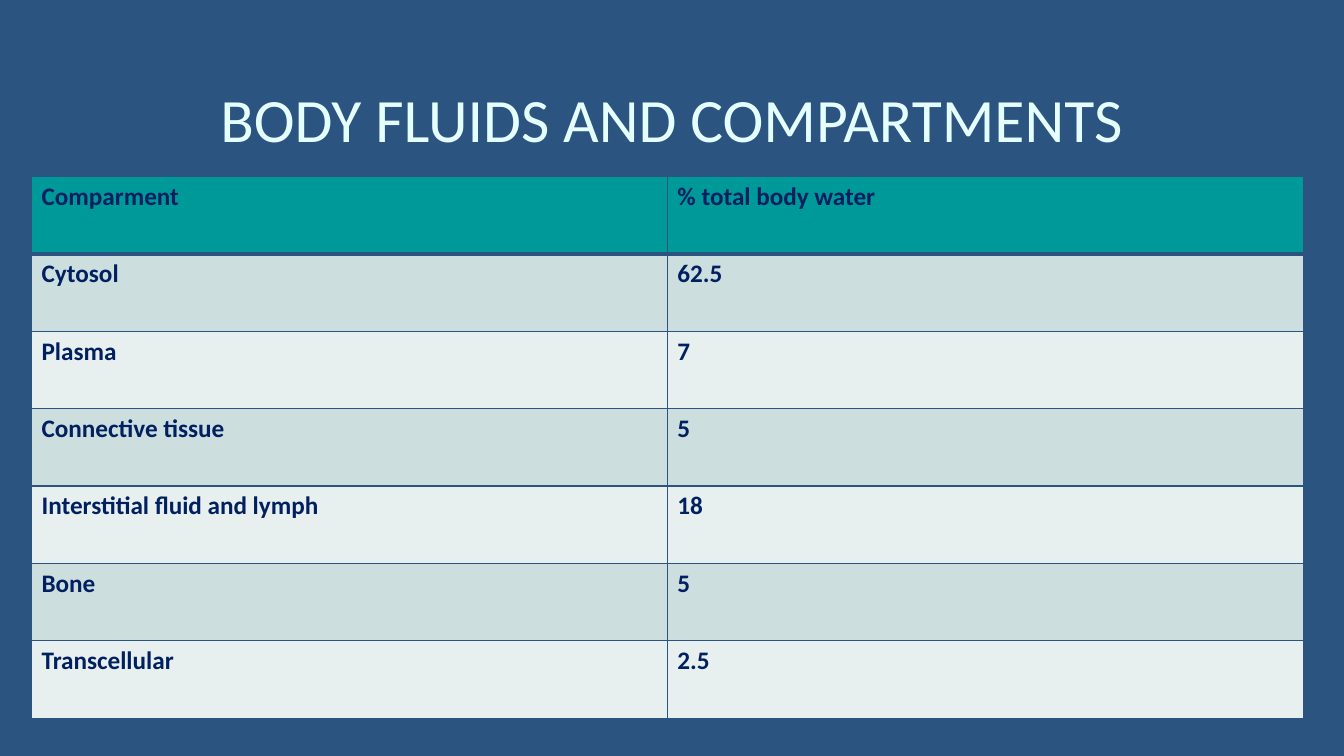
from lxml.etree import SubElement
from pptx import Presentation
from pptx.dml.color import RGBColor
from pptx.enum.text import MSO_ANCHOR, PP_ALIGN
from pptx.oxml.ns import qn
from pptx.util import Pt

COMPARTMENTS = [
    ("Comparment", "% total body water"),
    ("Cytosol", "62.5"),
    ("Plasma", "7"),
    ("Connective tissue", "5"),
    ("Interstitial fluid and lymph", "18"),
    ("Bone", "5"),
    ("Transcellular", "2.5"),
]


def color(hex_code):
    return RGBColor.from_string(hex_code)


class SlideBuilder:
    font_name = "Calibri"
    background = "2B5481"
    title_color = "E5FFFF"
    text_color = "002060"
    header_fill = "009999"
    band_fills = ("E7EFEF", "CCDEDE")

    def __init__(self, deck):
        self.page = deck.slides.add_slide(deck.slide_layouts[5])
        fill = self.page.background.fill
        fill.solid()
        fill.fore_color.rgb = color(self.background)

    def format_text(self, para, size, hex_code, bold=False):
        for span in para.runs:
            span.font.name = self.font_name
            span.font.size = Pt(size)
            span.font.bold = bold
            span.font.color.rgb = color(hex_code)

    def title(self, text, left, top, width, height):
        box = self.page.shapes.title
        box.left, box.top = Pt(left), Pt(top)
        box.width, box.height = Pt(width), Pt(height)
        frame = box.text_frame
        frame.text = text
        frame.word_wrap = True
        frame.vertical_anchor = MSO_ANCHOR.MIDDLE
        para = frame.paragraphs[0]
        para.alignment = PP_ALIGN.CENTER
        self.format_text(para, 44, self.title_color)

    def borders(self, cell, bottom_width):
        properties = cell._tc.get_or_add_tcPr()
        widths = {"a:lnL": 1, "a:lnR": 1, "a:lnT": 1, "a:lnB": bottom_width}
        for position, (side, width) in enumerate(widths.items()):
            line = SubElement(properties, qn(side), w=str(Pt(width)))
            solid = SubElement(line, qn("a:solidFill"))
            SubElement(solid, qn("a:srgbClr"), val=self.background)
            properties.insert(position, line)

    def table(self, rows, left, top, width, height):
        frame = self.page.shapes.add_table(
            len(rows), len(rows[0]), Pt(left), Pt(top), Pt(width), Pt(height))
        for row_number, values in enumerate(rows):
            is_header = row_number == 0
            fill = self.header_fill if is_header else self.band_fills[row_number % 2]
            for column_number, value in enumerate(values):
                cell = frame.table.cell(row_number, column_number)
                cell.text_frame.text = value
                self.format_text(cell.text_frame.paragraphs[0], 18, self.text_color, bold=True)
                cell.fill.solid()
                cell.fill.fore_color.rgb = color(fill)
                self.borders(cell, bottom_width=3 if is_header else 1)


def main():
    deck = Presentation()
    deck.slide_width, deck.slide_height = Pt(960), Pt(540)
    builder = SlideBuilder(deck)

    # Heading
    builder.title("BODY FLUIDS AND COMPARTMENTS", 48, 30, 864, 108)

    # Share of body water in each compartment
    builder.table(COMPARTMENTS, 22.5, 126, 908.5, 387)

    deck.save("out.pptx")


if __name__ == "__main__":
    main()
